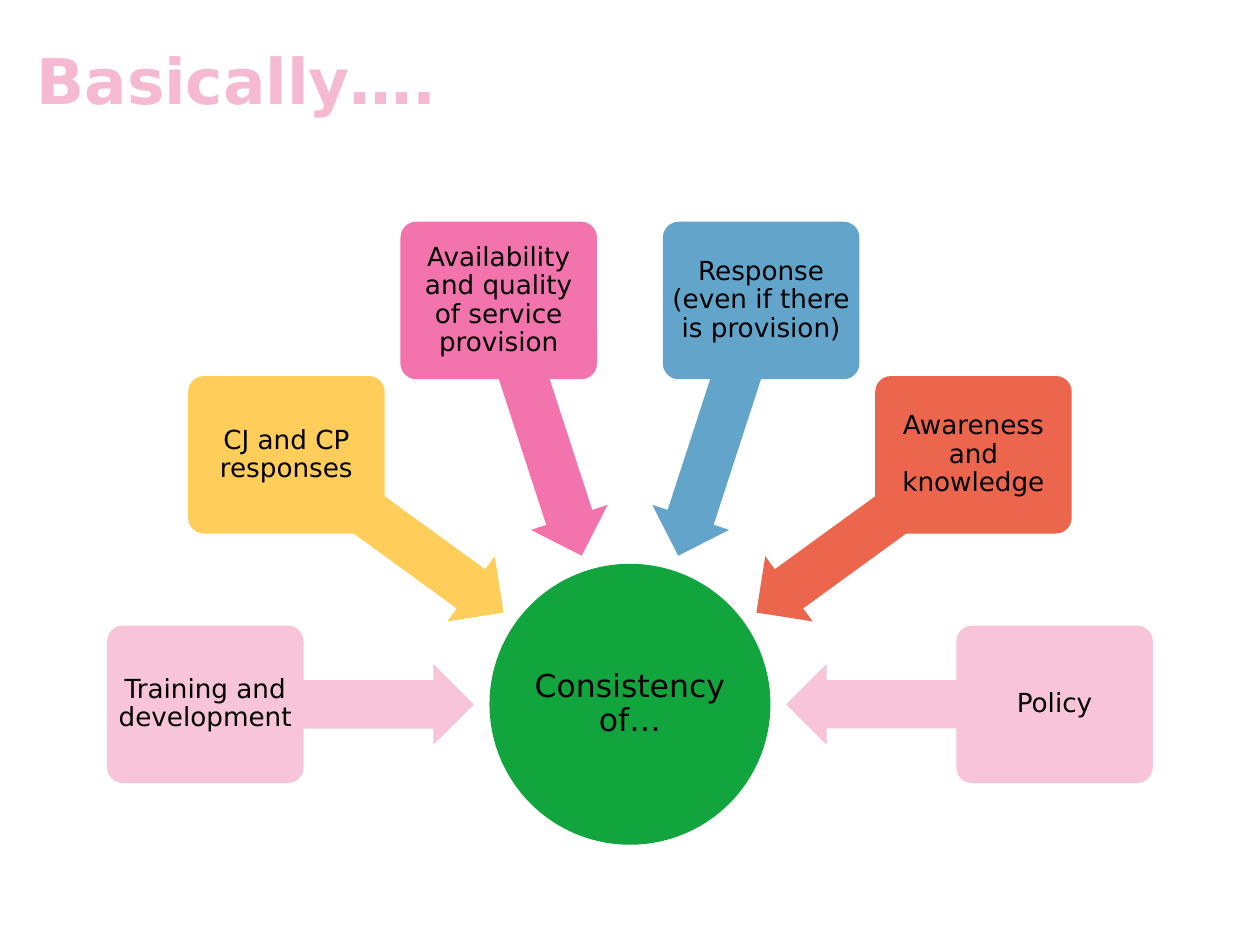
import math

from pptx import Presentation
from pptx.dml.color import RGBColor
from pptx.enum import shapes, text
from pptx.util import Inches, Pt

COLORS = {
    "title": "F5B9D2", "text": "000000", "green": "12A53E", "rose": "F7C4D9",
    "yellow": "FFCD5A", "pink": "F373AD", "blue": "63A4CA", "red": "EC664E",
}
FONT = "DejaVu Sans"
KIND = shapes.MSO_SHAPE
ALIGN = text.PP_ALIGN

HUB = (5, 5.59)
HUB_SIZE = (2.23, 2.23)
BOX_SIZE = (1.56, 1.25)
ARROW_SIZE = (2.14, 0.64)
BOX_RADIUS = 3.37
ARROW_RADIUS = 2.31
START, STEP = 180, 36

FACTORS = [
    ("Training and development", "rose"),
    ("CJ and CP responses", "yellow"),
    ("Availability and quality of service provision", "pink"),
    ("Response (even if there is provision)", "blue"),
    ("Awareness and knowledge", "red"),
    ("Policy", "rose"),
]


def rgb(name):
    return RGBColor.from_string(COLORS[name])


def orbit(radius, angle):
    """Point at a clockwise angle, in degrees, around the hub."""
    turn = math.radians(angle)
    return HUB[0] + radius * math.cos(turn), HUB[1] + radius * math.sin(turn)


class Deck:
    """Holds the style, the current slide and its diagram group."""

    def __init__(self):
        self.prs = Presentation()
        self.prs.slide_width, self.prs.slide_height = Inches(10), Inches(7.5)
        self.slide = self.prs.slides.add_slide(self.prs.slide_layouts[5])
        self.group = self.slide.shapes.add_group_shape()

    def label(self, shape, words, size, color="text", align=ALIGN.CENTER,
              inset=0.0, bold=False):
        frame = shape.text_frame
        frame.text = words
        margin = Inches(inset)
        layout = {
            "word_wrap": True, "auto_size": text.MSO_AUTO_SIZE.NONE,
            "vertical_anchor": text.MSO_ANCHOR.MIDDLE,
            "margin_left": margin, "margin_right": margin,
            "margin_top": margin, "margin_bottom": margin,
        }
        for name, value in layout.items():
            setattr(frame, name, value)
        para = frame.paragraphs[0]
        para.alignment, para.line_spacing = align, 0.9
        font = para.runs[0].font
        for name, value in {"name": FONT, "size": Pt(size), "bold": bold}.items():
            setattr(font, name, value)
        font.color.rgb = rgb(color)

    def title(self, words):
        title = self.slide.shapes.title
        place = {"left": 0.29, "top": 0.25, "width": 9.41, "height": 0.83}
        for name, value in place.items():
            setattr(title, name, Inches(value))
        self.label(title, words, 36, "title", ALIGN.LEFT, bold=True)

    def shape(self, kind, center, size, color, adjust=()):
        """Add a plain filled shape around its center."""
        left, top = (c - s / 2 for c, s in zip(center, size))
        shape = self.group.shapes.add_shape(
            kind, *(Inches(v) for v in (left, top, *size)))
        shape.shadow.inherit = False
        shape.fill.solid()
        shape.fill.fore_color.rgb = rgb(color)
        shape.line.fill.background()
        for index, value in enumerate(adjust):
            shape.adjustments[index] = value
        return shape

    def hub(self, words):
        hub = self.shape(KIND.OVAL, HUB, HUB_SIZE, "green")
        self.label(hub, words, 18, inset=0.01)

    def factor(self, words, color, angle):
        """Add a box and the arrow that leads from it to the hub."""
        arrow = self.shape(KIND.LEFT_ARROW, orbit(ARROW_RADIUS, angle),
                           ARROW_SIZE, color, (0.6, 0.5))
        arrow.rotation = angle % 360
        box = self.shape(KIND.ROUNDED_RECTANGLE, orbit(BOX_RADIUS, angle),
                         BOX_SIZE, color, (0.1,))
        self.label(box, words, 15, inset=0.03)


def main():
    deck = Deck()
    deck.title("Basically….")
    deck.hub("Consistency of…")
    for index, (words, color) in enumerate(FACTORS):
        deck.factor(words, color, START + index * STEP)
    deck.prs.save("out.pptx")


if __name__ == "__main__":
    main()
